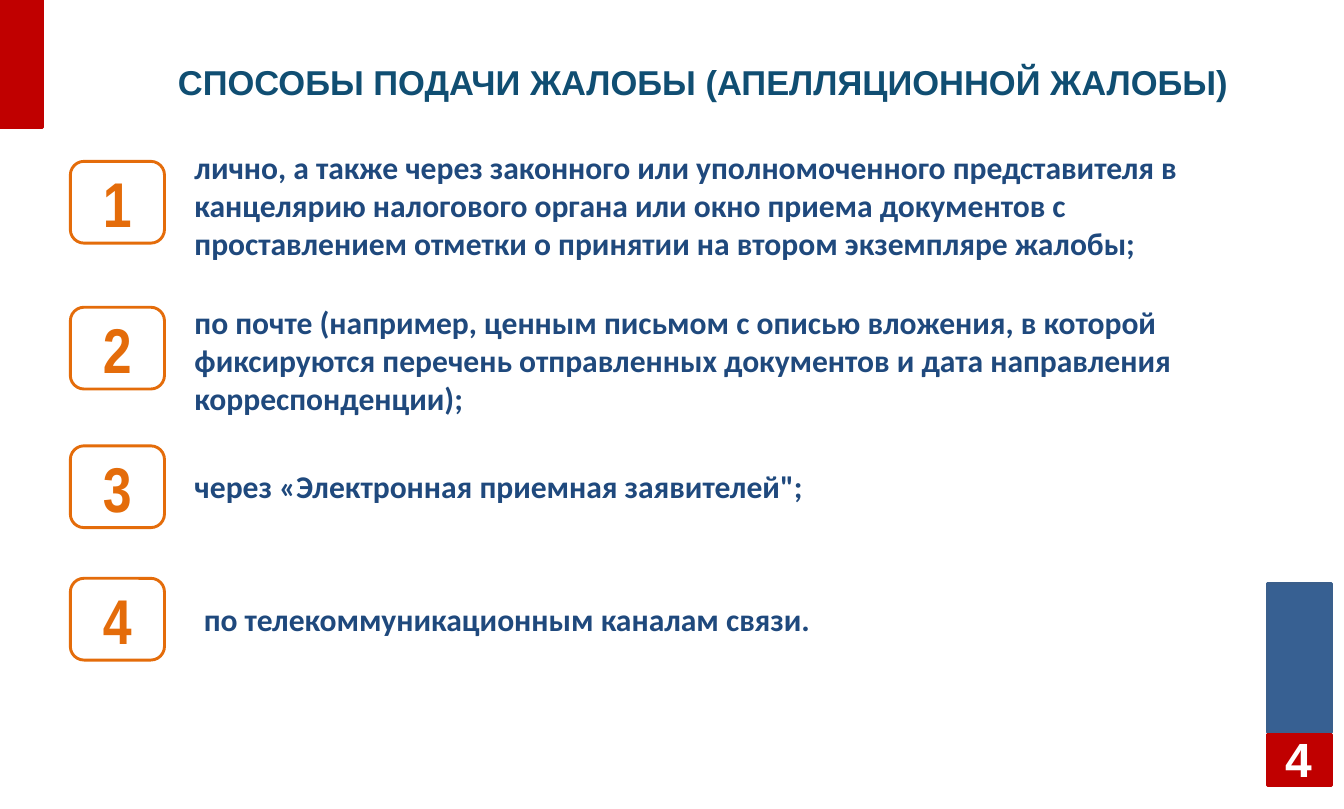
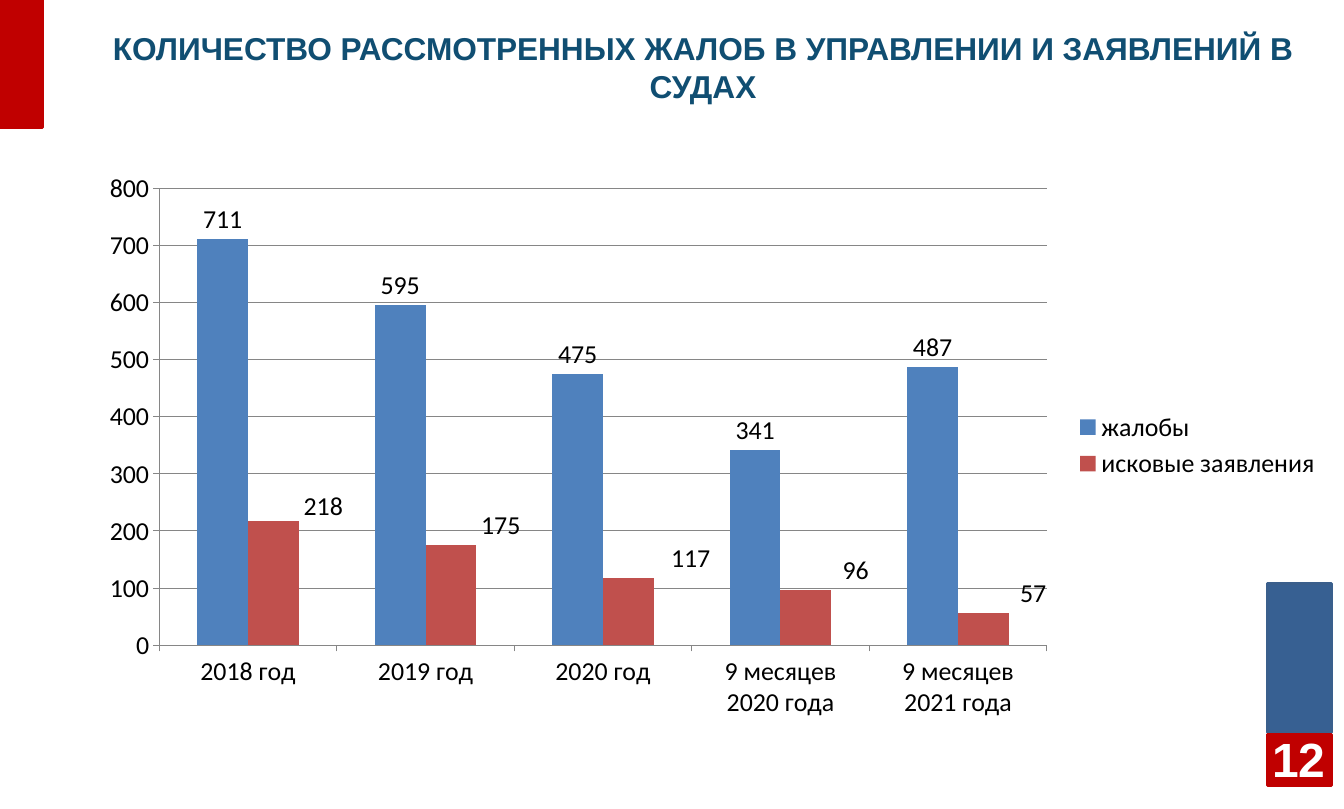
from lxml.etree import SubElement
from pptx import Presentation
from pptx.chart.data import CategoryChartData as ChartData
from pptx.dml.color import RGBColor as RGB
from pptx.enum.chart import XL_CHART_TYPE as Kind
from pptx.enum.chart import XL_LABEL_POSITION as Spot
from pptx.enum.chart import XL_LEGEND_POSITION as Side
from pptx.enum.chart import XL_TICK_MARK as Tick
from pptx.enum.shapes import MSO_SHAPE as Form
from pptx.enum.text import MSO_ANCHOR as Anchor
from pptx.enum.text import PP_ALIGN as Align
from pptx.oxml.ns import qn
from pptx.util import Inches, Pt

# Colours
RED = RGB(0xC0, 0x00, 0x00)
BLUE = RGB(0x37, 0x60, 0x92)
EDGE = RGB(0x3A, 0x5F, 0x8C)
TEAL = RGB(0x10, 0x4E, 0x72)
NAVY = RGB(0x1F, 0x49, 0x7D)
ORANGE = RGB(0xE4, 0x6C, 0x0A)
WHITE = RGB(0xFF, 0xFF, 0xFF)
BLACK = RGB(0x00, 0x00, 0x00)
GREY = RGB(0x86, 0x86, 0x86)
BAR_BLUE = RGB(0x4F, 0x81, 0xBD)
BAR_RED = RGB(0xC0, 0x50, 0x4D)

# Text styles
TITLE = {"name": "Arial", "size": Pt(24), "bold": True}
PAGE = {"name": "Arial", "size": Pt(33.4), "bold": True}
DIGIT = {"name": "Arial Narrow", "size": Pt(44), "bold": True}
BODY = {"name": "Calibri", "size": Pt(22), "bold": True}


def add_box(slide, form, spot, fill, line):
    box = slide.shapes.add_shape(form, *map(Inches, spot))
    box.shadow.inherit = False
    if fill is None:
        box.fill.background()
    else:
        box.fill.solid()
        box.fill.fore_color.rgb = fill
    box.line.color.rgb = line
    box.line.width = Pt(2)
    return box


def put_text(slide, spot, text, style, color, align=Align.CENTER,
             box=None, inset=(0, 0.05)):
    box = box or slide.shapes.add_textbox(*map(Inches, spot))
    frame = box.text_frame
    side, top = map(Inches, inset)
    look = {"word_wrap": True, "vertical_anchor": Anchor.MIDDLE,
            "margin_left": side, "margin_right": side,
            "margin_top": top, "margin_bottom": top}
    for key, value in look.items():
        setattr(frame, key, value)
    par = frame.paragraphs[0]
    par.alignment = align
    run = par.add_run()
    run.text = text
    for key, value in style.items():
        setattr(run.font, key, value)
    run.font.color.rgb = color


deck = Presentation()
deck.slide_width = Inches(12.99)
deck.slide_height = Inches(7.82)

# Shared bands, titles and page numbers
BANDS = [
    ((12.25, 5.64, 0.62, 1.44), BLUE, EDGE),
    ((12.25, 7.1, 0.62, 0.49), RED, RED),
    ((0, 0, 0.41, 1.23), RED, RED),
]
HEADS = [
    ("СПОСОБЫ ПОДАЧИ ЖАЛОБЫ (АПЕЛЛЯЦИОННОЙ ЖАЛОБЫ)",
     (0.76, 0.27, 12.07, 1.04), 24, "4"),
    ("КОЛИЧЕСТВО РАССМОТРЕННЫХ ЖАЛОБ В УПРАВЛЕНИИ И ЗАЯВЛЕНИЙ В СУДАХ",
     (0.81, 0.13, 11.97, 1.04), 22, "12"),
]
pages = []
for head, spot, size, number in HEADS:
    slide = deck.slides.add_slide(deck.slide_layouts[6])
    for area, fill, line in BANDS:
        add_box(slide, Form.RECTANGLE, area, fill, line)
    put_text(slide, spot, head, {**TITLE, "size": Pt(size)}, TEAL)
    put_text(slide, (12.22, 7.12, 0.67, 0.42), number, PAGE, WHITE)
    pages.append(slide)
ways, counts = pages

# Slide 1: numbered ways, as badge top, text left, text top, text
WAYS = [
    (1.56, 1.88, 1.46, "лично, а также через законного или уполномоченного "
     "представителя в канцелярию налогового органа или окно приема "
     "документов с проставлением отметки о принятии на втором экземпляре "
     "жалобы;"),
    (2.97, 1.88, 2.96, "по почте (например, ценным письмом с описью вложения, "
     "в которой фиксируются перечень отправленных документов и дата "
     "направления корреспонденции);"),
    (4.31, 1.88, 4.18, "через «Электронная приемная заявителей\";"),
    (5.59, 1.97, 5.46, "по телекоммуникационным каналам связи."),
]
for num, (top, left, high, text) in enumerate(WAYS, 1):
    spot = (0.68, top, 0.91, 0.79)
    badge = add_box(ways, Form.ROUNDED_RECTANGLE, spot, None, ORANGE)
    put_text(ways, spot, str(num), DIGIT, ORANGE, box=badge,
             inset=(0.11, 0.06))
    put_text(ways, (left, high, 10.24, 1.04), text, BODY, NAVY, Align.LEFT)

# Slide 2: column chart
data = ChartData()
data.categories = ["2018 год", "2019 год", "2020 год",
                   "9 месяцев 2020 года", "9 месяцев 2021 года"]
data.add_series("жалобы", [711, 595, 475, 341, 487])
data.add_series("исковые заявления", [218, 175, 117, 96, 57])
area = map(Inches, (0.82, 1.56, 12.05, 5.49))
chart = counts.shapes.add_chart(Kind.COLUMN_CLUSTERED, *area, data).chart
chart.has_title = False
for key, value in {"name": "Calibri", "size": Pt(18)}.items():
    setattr(chart.font, key, value)
chart.font.color.rgb = BLACK
chart.has_legend = True
chart.legend.position = Side.RIGHT
chart.legend.include_in_layout = False

# Axes and grid
scale = chart.value_axis
scale.has_major_gridlines = True
for axis in (chart.category_axis, scale):
    axis.major_tick_mark = Tick.OUTSIDE
    axis.minor_tick_mark = Tick.NONE
for part in (chart.category_axis, scale, scale.major_gridlines):
    part.format.line.color.rgb = GREY
    part.format.line.width = Pt(0.75)

# Columns and their values
plot = chart.plots[0]
plot.gap_width = 150
plot.overlap = 0
plot.vary_by_categories = False
for series, color in zip(plot.series, (BAR_BLUE, BAR_RED)):
    series.format.fill.solid()
    series.format.fill.fore_color.rgb = color
    series.data_labels.show_value = True
    series.data_labels.position = Spot.OUTSIDE_END

# Labels of the second series moved right of their columns, no leader lines
MOVES = [(0.04, 0.01), (0.04, 0), (0.05, 0), (0.04, 0), (0.04, 0)]
claims = plot.series[1]
for num in range(len(MOVES)):
    claims.points[num].data_label.position = Spot.OUTSIDE_END
group = claims.data_labels._element
for lead in group.findall(qn("c:showLeaderLines")):
    lead.set("val", "0")
for label, move in zip(group.findall(qn("c:dLbl")), MOVES):
    layout = SubElement(label, qn("c:layout"))
    label.insert(1, layout)
    manual = SubElement(layout, qn("c:manualLayout"))
    for axis, shift in zip("xy", move):
        SubElement(manual, qn("c:" + axis)).set("val", str(shift))

deck.save("out.pptx")
